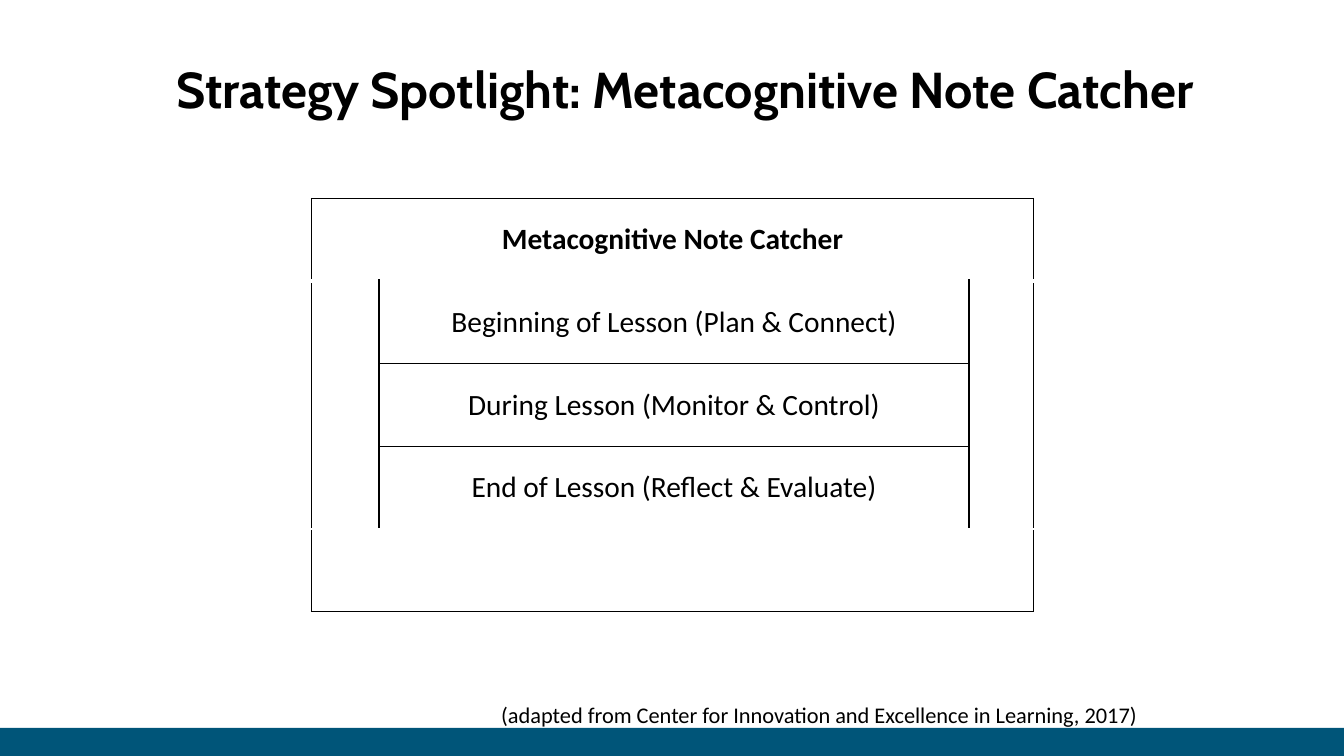
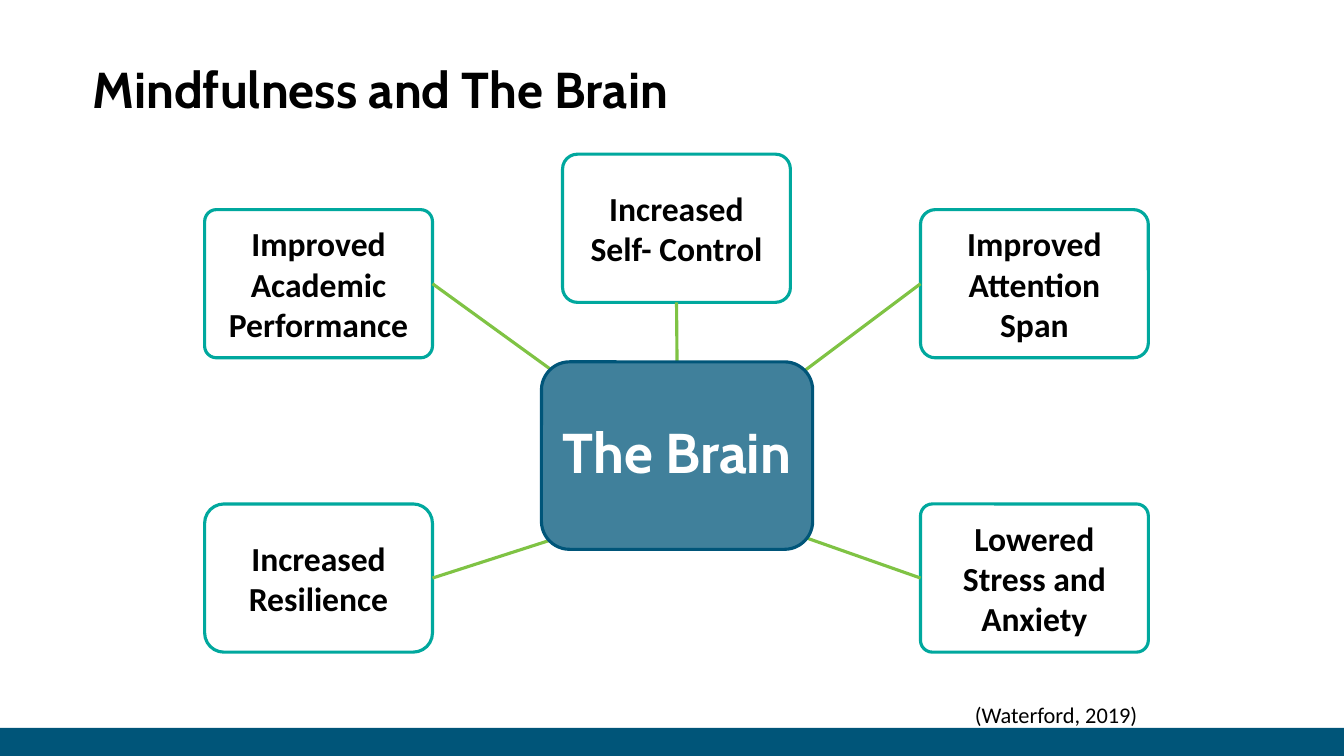
from lxml import etree
from pptx import Presentation
from pptx.dml.color import RGBColor
from pptx.enum import shapes, text
from pptx.oxml import ns
from pptx.util import Inches, Pt

BLACK = RGBColor(0x00, 0x00, 0x00)
WHITE = RGBColor(0xFF, 0xFF, 0xFF)
NAVY = RGBColor(0x00, 0x55, 0x79)
STEEL = RGBColor(0x40, 0x80, 0x9B)
TEAL = RGBColor(0x00, 0xA8, 0x9E)
GREEN = RGBColor(0x7F, 0xC3, 0x44)
HEADING_FONT, BODY_FONT = "Cabin", "Calibri"
LEFT, CENTER, RIGHT = text.PP_ALIGN.LEFT, text.PP_ALIGN.CENTER, text.PP_ALIGN.RIGHT
MIDDLE, TOP = text.MSO_ANCHOR.MIDDLE, text.MSO_ANCHOR.TOP


def write(frame, words, size, font=BODY_FONT, color=BLACK, bold=False,
          align=CENTER, anchor=MIDDLE, insets=(0.1, 0.1), spacing=None):
    """Fill a text frame, one paragraph per line; insets are (sides, top and bottom)."""
    frame.word_wrap = True
    frame.vertical_anchor = anchor
    frame.margin_left = frame.margin_right = Inches(insets[0])
    frame.margin_top = frame.margin_bottom = Inches(insets[1])
    frame.text = words
    for paragraph in frame.paragraphs:
        paragraph.alignment = align
        paragraph.line_spacing = spacing
        for run in paragraph.runs:
            run.font.name, run.font.size = font, Pt(size)
            run.font.bold, run.font.color.rgb = bold, color


def add_box(slide, preset, left, top, width, height, fill=None, line=None):
    box = slide.shapes.add_shape(
        preset, Inches(left), Inches(top), Inches(width), Inches(height))
    box.shadow.inherit = False
    if fill is None:
        box.fill.background()
    else:
        box.fill.solid()
        box.fill.fore_color.rgb = fill
    if line is None:
        box.line.fill.background()
    else:
        box.line.color.rgb, box.line.width = line, Pt(2.25)
    return box


prs = Presentation()
prs.slide_width, prs.slide_height = Inches(13.33), Inches(7.5)

# Shared band, title and citation
slides = []
for title, title_left, title_width, citation in (
    ("Strategy Spotlight: Metacognitive Note Catcher", 1.75, 11.33,
     "(adapted from Center for Innovation and Excellence in Learning, 2017)"),
    ("Mindfulness and The Brain", 0.92, 11.5, "(Waterford, 2019)"),
):
    slide = prs.slides.add_slide(prs.slide_layouts[6])
    add_box(slide, shapes.MSO_SHAPE.RECTANGLE, 0, 7.22, 13.33, 0.28, NAVY)
    heading = slide.shapes.add_textbox(
        Inches(title_left), Inches(0.4), Inches(title_width), Inches(0.95))
    write(heading.text_frame, title, 36, font=HEADING_FONT, bold=True,
          align=LEFT, insets=(0, 0))
    source = slide.shapes.add_textbox(Inches(4.48), Inches(6.91), Inches(6.9), Inches(0.37))
    write(source.text_frame, citation, 16, align=RIGHT, anchor=TOP, insets=(0.1, 0.05))
    slides.append(slide)
catcher_slide, brain_slide = slides

# Note catcher: a frame of merged cells around three lesson stages
catcher = catcher_slide.shapes.add_table(
    5, 3, Inches(3.09), Inches(1.97), Inches(7.16), Inches(4.1)).table
catcher.first_row = catcher.horz_banding = False
for column, width in zip(catcher.columns, (0.67, 5.85, 0.64)):
    column.width = Inches(width)
for row in catcher.rows:
    row.height = Inches(0.82)
for first, last in (((0, 0), (0, 2)), ((1, 0), (3, 0)), ((1, 2), (3, 2)), ((4, 0), (4, 2))):
    catcher.cell(*first).merge(catcher.cell(*last))

for r in range(5):
    for c in range(3):
        cell = catcher.cell(r, c)
        cell.fill.solid()
        cell.fill.fore_color.rgb = WHITE
        stage_row, stage_column = 1 <= r <= 3, c == 1
        edges = (
            ("a:lnL", c == 0 or stage_row),
            ("a:lnR", c != 1 or stage_row),
            ("a:lnT", r == 0 or (stage_column and r in (2, 3))),
            ("a:lnB", r == 4 or (stage_column and r in (1, 2))),
        )
        properties = cell._tc.get_or_add_tcPr()
        for position, (tag, visible) in enumerate(edges):
            weight = 3 if r == 0 and tag == "a:lnB" else 1
            edge = etree.Element(ns.qn(tag), w=str(Pt(weight)))
            ink = etree.SubElement(edge, ns.qn("a:solidFill"))
            etree.SubElement(ink, ns.qn("a:srgbClr"), val=str(BLACK if visible else WHITE))
            properties.insert(position, edge)

for r, c, words in (
    (0, 0, "Metacognitive Note Catcher"),
    (1, 1, "Beginning of Lesson (Plan & Connect)"),
    (2, 1, "During Lesson (Monitor & Control)"),
    (3, 1, "End of Lesson (Reflect & Evaluate)"),
):
    cell = catcher.cell(r, c)
    write(cell.text_frame, words, 21, bold=r == 0)
    cell.vertical_anchor = MIDDLE
    cell.margin_left = cell.margin_right = Inches(0.12)
    cell.margin_top = cell.margin_bottom = Inches(0.06)

# Outcomes around the brain: words, column, top, corner, joined side, link end
ROUNDED = shapes.MSO_SHAPE.ROUNDED_RECTANGLE
for words, column, top, corner, side, end in (
    ("Improved Academic Performance", 0, 2.08, 0.08, 3, (5.58, 3.75)),
    ("Increased Resilience", 0, 5, 0.13, 3, (5.58, 5.32)),
    ("Improved Attention\nSpan", 2, 2.08, 0.1, 1, (7.95, 3.7)),
    ("Lowered\nStress and Anxiety", 2, 5, 0.08, 1, (7.95, 5.32)),
    ("Increased\nSelf- Control", 1, 1.53, 0.1, 2, (6.71, 3.59)),
):
    outcome = add_box(brain_slide, ROUNDED, 2.03 + 3.55 * column, top, 2.26, 1.47, line=TEAL)
    outcome.adjustments[0] = corner
    write(outcome.text_frame, words, 24, bold=True)
    end_x, end_y = map(Inches, end)
    link = brain_slide.shapes.add_connector(
        shapes.MSO_CONNECTOR.STRAIGHT, end_x, end_y, end_x, end_y)
    link.begin_connect(outcome, side)
    link.line.color.rgb, link.line.width = GREEN, Pt(2.25)
    etree.SubElement(link._element.spPr, ns.qn("a:effectLst"))

brain = add_box(brain_slide, ROUNDED, 5.37, 3.59, 2.69, 1.86, STEEL, NAVY)
brain.adjustments[0] = 0.15
write(brain.text_frame, "The Brain", 40, font=HEADING_FONT, color=WHITE, bold=True,
      insets=(0.11, 0.07), spacing=0.9)
link.end_connect(brain, 0)  # the last link meets the middle of the brain's top

prs.save("out.pptx")
